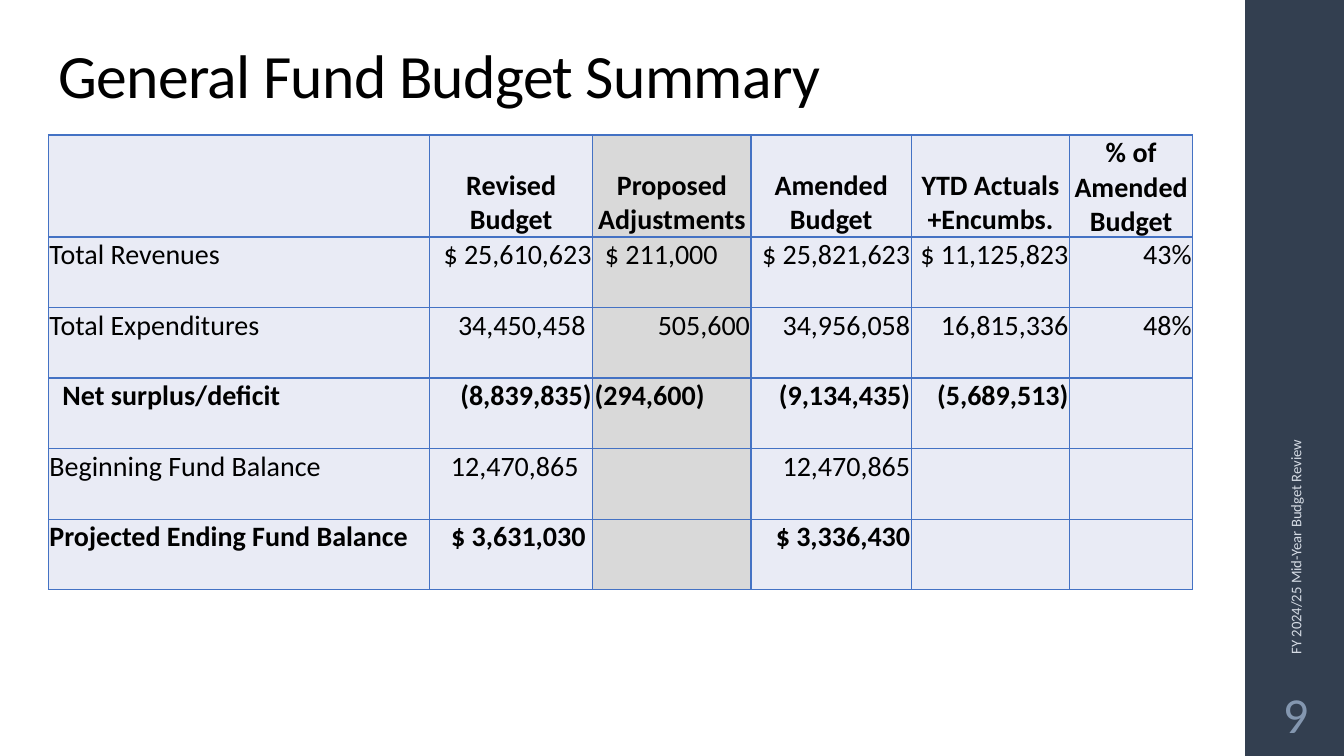
from lxml import etree
from pptx import Presentation
from pptx.dml.color import RGBColor
from pptx.enum.shapes import MSO_SHAPE
from pptx.enum.text import MSO_ANCHOR, MSO_AUTO_SIZE, PP_ALIGN
from pptx.oxml.ns import qn
from pptx.util import Inches, Pt

RECTANGLE = MSO_SHAPE.RECTANGLE
TOP, MIDDLE, BOTTOM = MSO_ANCHOR.TOP, MSO_ANCHOR.MIDDLE, MSO_ANCHOR.BOTTOM
LEFT, CENTER, RIGHT = PP_ALIGN.LEFT, PP_ALIGN.CENTER, PP_ALIGN.RIGHT
NO_AUTOFIT = MSO_AUTO_SIZE.NONE

BLACK = RGBColor(0x00, 0x00, 0x00)
NAVY = RGBColor(0x33, 0x3F, 0x50)
PALE_BLUE = RGBColor(0xD6, 0xDC, 0xE5)
SLATE = RGBColor(0x84, 0x97, 0xB0)
CELL_FILL = RGBColor(0xE9, 0xEB, 0xF5)
ADJUSTMENT_FILL = RGBColor(0xD9, 0xD9, 0xD9)
BORDER = RGBColor(0x44, 0x72, 0xC4)

FONT = "Calibri"
COLUMN_WIDTHS = [3.78, 1.62, 1.57, 1.59, 1.57, 1.22]
HEADER_HEIGHT, ROW_HEIGHT = 0.83, 0.7
ADJUSTMENT_COLUMN = 2
BOLD_ROWS = {0, 3, 5}
CELL_MARGIN = 0.01
LABEL_INDENTS = {3: 0.14}
RIGHT_GAPS = {(1, 2): 0.33, (2, 1): 0.07, (3, 2): 0.46, (4, 1): 0.14, (5, 1): 0.07}
BUDGET_ROWS = [
    ["", "Revised Budget", "Proposed Adjustments", "Amended Budget",
     "YTD Actuals +Encumbs.", "% of Amended Budget"],
    ["Total Revenues", "$ 25,610,623", "$ 211,000", "$ 25,821,623",
     "$ 11,125,823", "43%"],
    ["Total Expenditures", "34,450,458", "505,600", "34,956,058",
     "16,815,336", "48%"],
    ["Net surplus/deficit", "(8,839,835)", "(294,600)", "(9,134,435)",
     "(5,689,513)", ""],
    ["Beginning Fund Balance", "12,470,865", "", "12,470,865", "", ""],
    ["Projected Ending Fund Balance", "$ 3,631,030", "", "$ 3,336,430", "", ""],
]


def write_text(frame, text, size, color, align=LEFT, bold=False):
    frame.text = text
    para = frame.paragraphs[0]
    para.alignment = align
    para.font.size = Pt(size)
    for span in para.runs:
        span.font.name = FONT
        span.font.size = Pt(size)
        span.font.bold = bold
        span.font.color.rgb = color
    return para


def place(shape, left, top, width, height):
    shape.left, shape.top = Inches(left), Inches(top)
    shape.width, shape.height = Inches(width), Inches(height)


def add_title(page, text):
    title = page.shapes.title
    place(title, 0.48, 0.17, 10.6, 0.99)
    frame = title.text_frame
    frame.word_wrap = True
    frame.auto_size = NO_AUTOFIT
    frame.vertical_anchor = BOTTOM
    para = write_text(frame, text, 44, BLACK)
    para.line_spacing = 0.9
    para.runs[0].font._element.set("spc", "-50")


def add_sidebar(page):
    bar = page.shapes.add_shape(
        RECTANGLE, Inches(12.35), Inches(0), Inches(0.98), Inches(7.5))
    bar.shadow.inherit = False
    bar.fill.solid()
    bar.fill.fore_color.rgb = NAVY
    bar.line.fill.background()


def add_label(page, text, left, top, width, height, size, color, align=LEFT):
    box = page.shapes.add_textbox(
        Inches(left), Inches(top), Inches(width), Inches(height))
    frame = box.text_frame
    frame.word_wrap = True
    frame.vertical_anchor = MIDDLE
    write_text(frame, text, size, color, align)
    return box


def add_borders(cell):
    properties = cell._tc.get_or_add_tcPr()
    for position, side in enumerate(("lnL", "lnR", "lnT", "lnB")):
        line = etree.Element(qn(f"a:{side}"), w=str(Pt(1)))
        fill = etree.SubElement(line, qn("a:solidFill"))
        etree.SubElement(fill, qn("a:srgbClr"), val=str(BORDER))
        properties.insert(position, line)


def format_cell(cell, text, row, column):
    if row == 0:
        align = CENTER
    else:
        align = RIGHT if column else LEFT
    indent = LABEL_INDENTS.get(row, CELL_MARGIN) if column == 0 else CELL_MARGIN
    cell.margin_left = Inches(indent)
    cell.margin_right = Inches(RIGHT_GAPS.get((row, column), CELL_MARGIN))
    cell.margin_top = Inches(CELL_MARGIN)
    cell.margin_bottom = Inches(0)
    cell.vertical_anchor = TOP if row else BOTTOM
    write_text(cell.text_frame, text, 20, BLACK, align, row in BOLD_ROWS)
    cell.fill.solid()
    cell.fill.fore_color.rgb = (
        ADJUSTMENT_FILL if column == ADJUSTMENT_COLUMN else CELL_FILL)
    add_borders(cell)


def add_budget_table(page):
    table = page.shapes.add_table(
        len(BUDGET_ROWS), len(COLUMN_WIDTHS),
        Inches(0.48), Inches(1.34), Inches(11.36), Inches(4.49)).table
    table.first_row = False
    table.horz_banding = False
    for column, width in zip(table.columns, COLUMN_WIDTHS):
        column.width = Inches(width)
    for row, values in enumerate(BUDGET_ROWS):
        table.rows[row].height = Inches(ROW_HEIGHT if row else HEADER_HEIGHT)
        for column, text in enumerate(values):
            format_cell(table.cell(row, column), text, row, column)


def main():
    deck = Presentation()
    deck.slide_width, deck.slide_height = Inches(13.33), Inches(7.5)
    page = deck.slides.add_slide(deck.slide_layouts[5])
    add_sidebar(page)
    add_title(page, "General Fund Budget Summary")
    review = add_label(page, "FY 2024/25 Mid-Year Budget Review",
                       10.89, 4.43, 3.92, 0.4, 10.5, PALE_BLUE)
    review.rotation = 270
    add_budget_table(page)
    add_label(page, "9", 12.35, 6.75, 1, 0.65, 36, SLATE, CENTER)
    deck.save("out.pptx")


if __name__ == "__main__":
    main()
